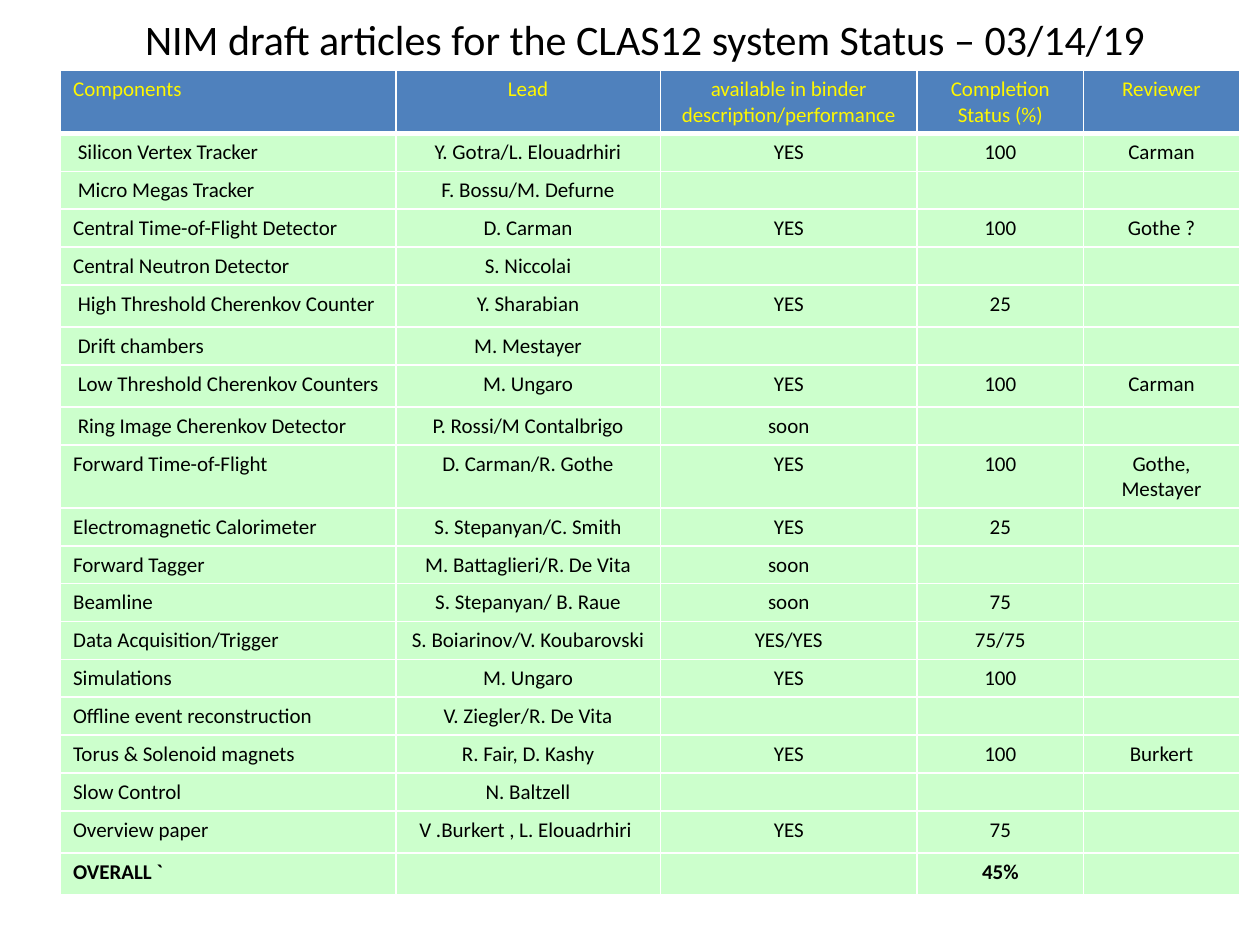
from lxml.etree import SubElement
from pptx import Presentation
from pptx.dml.color import RGBColor
from pptx.enum.text import MSO_ANCHOR as Anchor, MSO_AUTO_SIZE as AutoSize, PP_ALIGN as Align
from pptx.oxml.ns import qn
from pptx.util import Cm, Pt

HEADINGS = ["Components", "Lead", "available in binder\ndescription/performance",
            "Completion\nStatus (%)", "Reviewer"]
ARTICLES = [
    [" Silicon Vertex Tracker", "Y. Gotra/L. Elouadrhiri", "YES", "100", "Carman"],
    [" Micro Megas Tracker", "F. Bossu/M. Defurne", "", "", ""],
    ["Central Time-of-Flight Detector", "D. Carman", "YES", "100", "Gothe ?"],
    ["Central Neutron Detector", "S. Niccolai", "", "", ""],
    [" High Threshold Cherenkov Counter", "Y. Sharabian", "YES", "25", ""],
    [" Drift chambers", "M. Mestayer", "", "", ""],
    [" Low Threshold Cherenkov Counters", "M. Ungaro", "YES", "100", "Carman"],
    [" Ring Image Cherenkov Detector", "P. Rossi/M Contalbrigo", "soon", "", ""],
    ["Forward Time-of-Flight", "D. Carman/R. Gothe", "YES", "100", "Gothe, Mestayer"],
    ["Electromagnetic Calorimeter", "S. Stepanyan/C. Smith", "YES", "25", ""],
    ["Forward Tagger", "M. Battaglieri/R. De Vita", "soon", "", ""],
    ["Beamline", "S. Stepanyan/ B. Raue", "soon", "75", ""],
    ["Data Acquisition/Trigger", "S. Boiarinov/V. Koubarovski", "YES/YES", "75/75", ""],
    ["Simulations", "M. Ungaro", "YES", "100", ""],
    ["Offline event reconstruction", "V. Ziegler/R. De Vita", "", "", ""],
    ["Torus & Solenoid magnets", "R. Fair, D. Kashy", "YES", "100", "Burkert"],
    ["Slow Control", "N. Baltzell", "", "", ""],
    ["Overview paper", "V .Burkert , L. Elouadrhiri ", "YES", "75", ""],
]
OVERALL = ["OVERALL `", "", "", "45%", ""]
COLUMN_WIDTHS = [6.76, 5.33, 5.18, 3.35, 3.15]
ROW_HEIGHT, TALL_ROW, TWO_LINE_ROW = 0.76, 0.85, 1.27
ROW_HEIGHTS = {0: TWO_LINE_ROW, 5: TALL_ROW, 7: TALL_ROW, 9: TWO_LINE_ROW,
               18: TALL_ROW, 19: TALL_ROW}

BODY_FONT = {"name": "Calibri", "size": Pt(12), "bold": False}
HEADER_STYLE = {"fill": "4F81BD", "color": "FFF700", "font": BODY_FONT, "bottom": 3}
ARTICLE_STYLE = {"fill": "CCFFCC", "color": "000000", "font": BODY_FONT, "bottom": 1}
OVERALL_STYLE = {**ARTICLE_STYLE, "font": {**BODY_FONT, "bold": True}}


def rgb(code):
    return RGBColor.from_string(code)


def apply(target, values):
    for key, value in values.items():
        setattr(target, key, value)


def add_title(slide, box):
    title = slide.shapes.title
    apply(title, dict(zip(("left", "top", "width", "height"), map(Cm, box))))
    title.text = "NIM draft articles for the CLAS12 system Status – 03/14/19"
    apply(title.text_frame, {"word_wrap": False, "auto_size": AutoSize.SHAPE_TO_FIT_TEXT,
                             "vertical_anchor": Anchor.TOP})
    heading = title.text_frame.paragraphs[0]
    heading.alignment = Align.LEFT
    apply(heading.runs[0].font, {"name": "Calibri", "size": Pt(24)})
    heading.runs[0].font.color.rgb = rgb("000000")


def draw_borders(cell, bottom):
    properties = cell._tc.get_or_add_tcPr()
    for side, width in {"lnL": 1, "lnR": 1, "lnT": 1, "lnB": bottom}.items():
        line = SubElement(properties, qn(f"a:{side}"), w=str(Pt(width)))
        SubElement(SubElement(line, qn("a:solidFill")), qn("a:srgbClr"), val="FFFFFF")


def fill_cell(cell, text, alignment, style):
    draw_borders(cell, style["bottom"])
    cell.fill.solid()
    cell.fill.fore_color.rgb = rgb(style["fill"])
    cell.text = text
    for paragraph in cell.text_frame.paragraphs:
        paragraph.alignment = alignment
        for run in paragraph.runs:
            apply(run.font, style["font"])
            run.font.color.rgb = rgb(style["color"])
        if not paragraph.runs:
            SubElement(paragraph._p, qn("a:endParaRPr"), sz="1200")


def add_status_table(slide, box):
    entries = [HEADINGS, *ARTICLES, OVERALL]
    styles = [HEADER_STYLE, *[ARTICLE_STYLE] * len(ARTICLES), OVERALL_STYLE]
    status = slide.shapes.add_table(len(entries), len(HEADINGS), *map(Cm, box)).table
    for column, width in zip(status.columns, COLUMN_WIDTHS):
        column.width = Cm(width)
    for index, (entry, style) in enumerate(zip(entries, styles)):
        status.rows[index].height = Cm(ROW_HEIGHTS.get(index, ROW_HEIGHT))
        for position, text in enumerate(entry):
            alignment = Align.CENTER if position else Align.LEFT
            fill_cell(status.cell(index, position), text, alignment, style)


def main():
    deck = Presentation()
    apply(deck, {"slide_width": Cm(25.4), "slide_height": Cm(19.05)})
    slide = deck.slides.add_slide(deck.slide_layouts.get_by_name("Title Only"))
    add_title(slide, (2.67, 0.15, 21.31, 1.27))
    add_status_table(slide, (1.22, 1.42, sum(COLUMN_WIDTHS), 16.6))
    deck.save("out.pptx")


if __name__ == "__main__":
    main()
